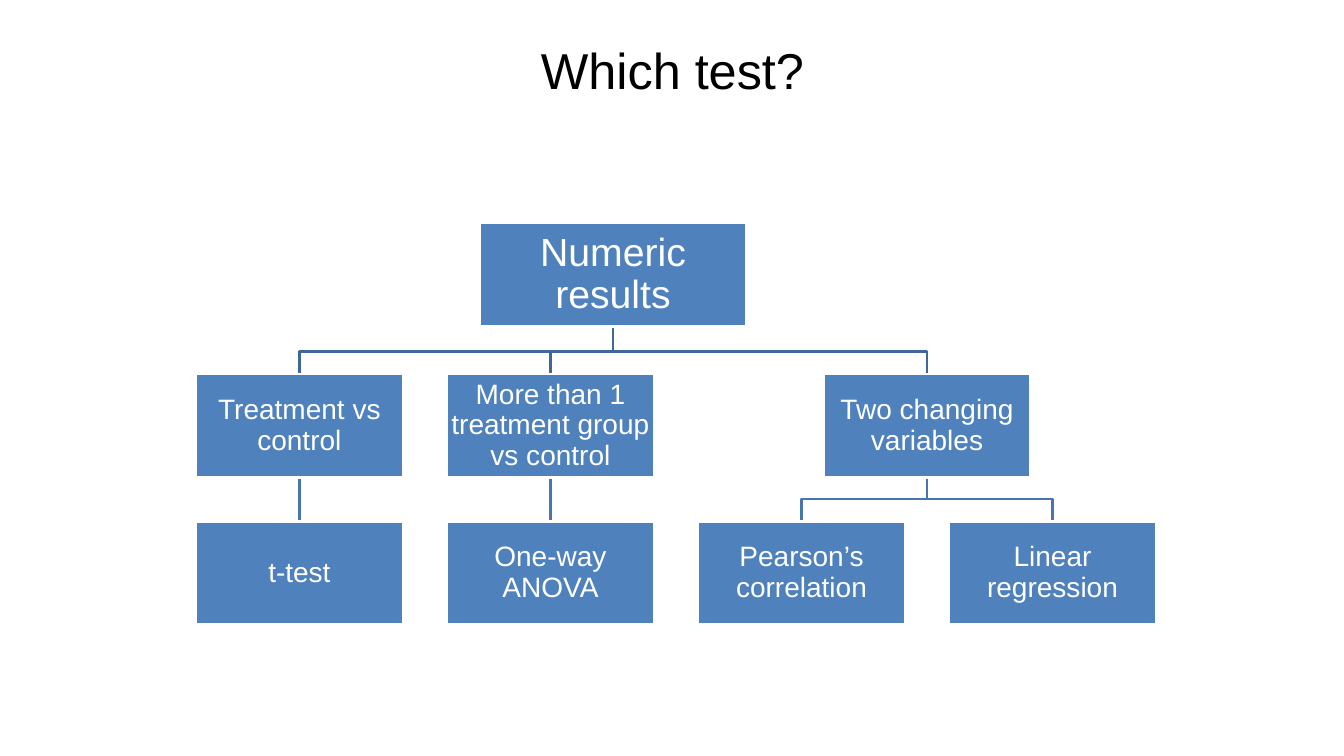
import pptx
import pptx.util
import pptx.dml.color
import pptx.enum.shapes
import pptx.enum.text
import pptx.oxml.ns
import lxml.etree

Inches = pptx.util.Inches
Pt = pptx.util.Pt

HUES = {
    "box": "4F81BD",
    "white": "FFFFFF",
    "black": "000000",
    "top": "3F6797",
    "low": "4875AC",
}
HIGH = 1.03
WIDE = 2.06
ROOT = (6.08, 2.21)
MID = 3.71
BASE = 5.17
COLS = [2.97 + 2.49 * i for i in range(4)]
PAIR = (COLS[2] + COLS[3]) / 2


def get_hue(name):
    return pptx.dml.color.RGBColor.from_string(HUES[name])


def set_text(shape, text, size, hue, inset, space):
    frame = shape.text_frame
    frame.text = text
    frame.word_wrap = True
    frame.vertical_anchor = pptx.enum.text.MSO_ANCHOR.MIDDLE
    frame.margin_left = frame.margin_right = Inches(inset)
    frame.margin_top = frame.margin_bottom = Inches(inset)
    para = frame.paragraphs[0]
    para.alignment = pptx.enum.text.PP_ALIGN.CENTER
    para.line_spacing = space
    font = para.runs[0].font
    font.name = "Arial"
    font.size = Pt(size)
    font.color.rgb = get_hue(hue)


def set_line(shape, hue):
    shape.line.color.rgb = get_hue(hue)
    shape.line.width = Pt(2)


def add_title(slide, text):
    box = slide.shapes.add_textbox(Inches(2.17), Inches(0.3), Inches(9), Inches(0.77))
    set_text(box, text, 36, "black", 0.05, 1.0)


def add_box(slide, text, mid, top, wide=WIDE, size=20, inset=0.01):
    box = slide.shapes.add_shape(
        pptx.enum.shapes.MSO_SHAPE.RECTANGLE,
        Inches(mid - wide / 2), Inches(top), Inches(wide), Inches(HIGH))
    box.shadow.inherit = False
    box.fill.solid()
    box.fill.fore_color.rgb = get_hue("box")
    set_line(box, "white")
    set_text(box, text, size, "white", inset, 0.9)


def add_stem(slide, mid, top, end, hue):
    stem = slide.shapes.add_connector(
        pptx.enum.shapes.MSO_CONNECTOR.STRAIGHT,
        Inches(mid), Inches(top), Inches(mid), Inches(end))
    set_line(stem, hue)
    props = stem.element.find(pptx.oxml.ns.qn("p:spPr"))
    lxml.etree.SubElement(props, pptx.oxml.ns.qn("a:effectLst"))


def add_elbow(slide, start, bend, end, hue):
    (left, top), (right, base) = start, end
    path = slide.shapes.build_freeform(Inches(left), Inches(top))
    spots = [(left, bend), (right, bend), (right, base)]
    path.add_line_segments([(Inches(x), Inches(y)) for x, y in spots], close=False)
    elbow = path.convert_to_shape()
    elbow.shadow.inherit = False
    elbow.fill.background()
    set_line(elbow, hue)


def main():
    deck = pptx.Presentation()
    deck.slide_width = Inches(13.33)
    deck.slide_height = Inches(7.5)
    slide = deck.slides.add_slide(deck.slide_layouts[6])
    add_title(slide, "Which test?")

    groups = [
        ("Treatment vs control", COLS[0]),
        ("More than 1 treatment group vs control", COLS[1]),
        ("Two changing variables", PAIR),
    ]
    tests = ["t-test", "One-way ANOVA", "Pearson’s correlation", "Linear regression"]

    for mid in COLS[2:]:
        add_elbow(slide, (PAIR, MID + HIGH), 4.95, (mid, BASE), "low")
    for mid in COLS[:2]:
        add_stem(slide, mid, MID + HIGH, BASE, "low")
    for text, mid in groups:
        add_elbow(slide, (ROOT[0], ROOT[1] + HIGH), 3.49, (mid, MID), "top")

    add_box(slide, "Numeric results", *ROOT, wide=2.64, size=28, inset=0.02)
    for text, mid in groups:
        add_box(slide, text, mid, MID)
    for text, mid in zip(tests, COLS):
        add_box(slide, text, mid, BASE)
    deck.save("out.pptx")


if __name__ == "__main__":
    main()
